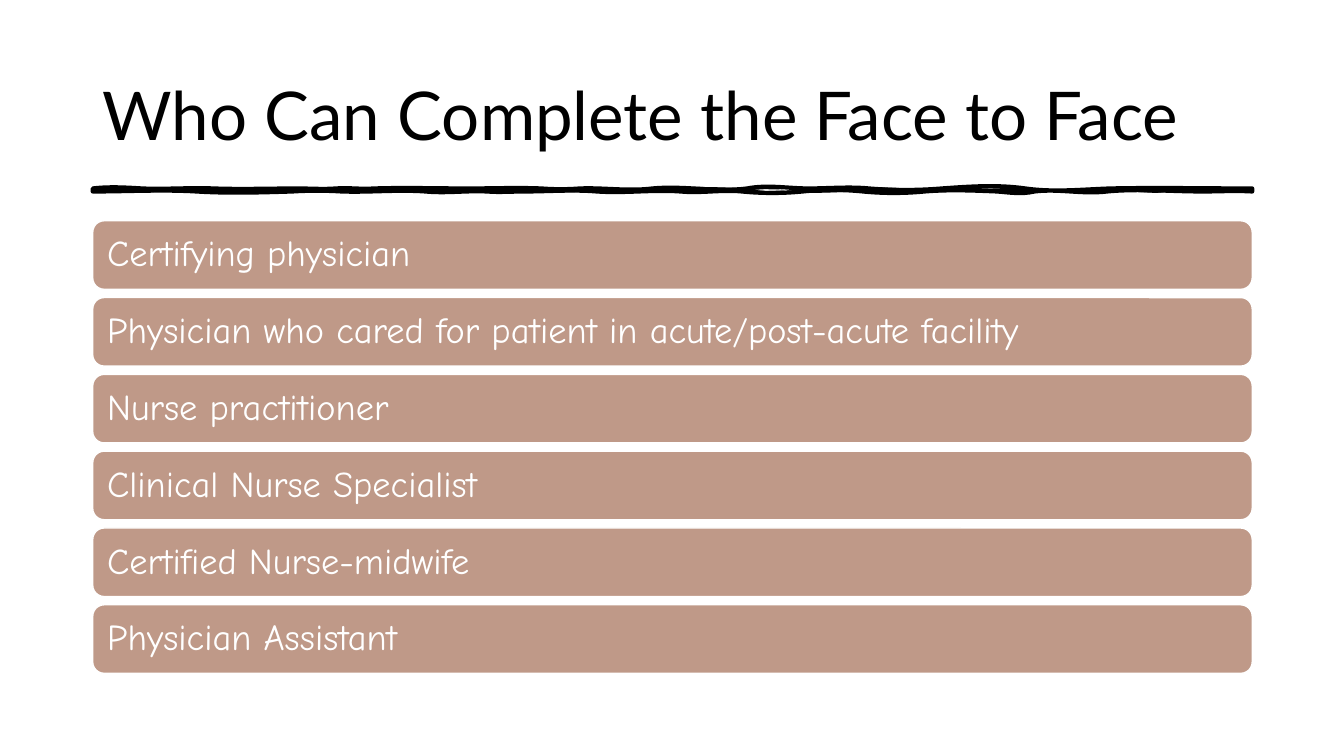
from dataclasses import dataclass

from lxml import etree
from pptx import Presentation
from pptx.dml.color import RGBColor
from pptx.enum.shapes import MSO_SHAPE
from pptx.enum.text import MSO_ANCHOR, PP_ALIGN
from pptx.oxml.ns import qn
from pptx.util import Inches, Pt

ROUNDED = MSO_SHAPE.ROUNDED_RECTANGLE
MIDDLE = MSO_ANCHOR.MIDDLE
LEFT = PP_ALIGN.LEFT


@dataclass(frozen=True)
class Theme:
    ink: RGBColor = RGBColor(0x00, 0x00, 0x00)
    paper: RGBColor = RGBColor(0xFF, 0xFF, 0xFF)
    bar: RGBColor = RGBColor(0xBF, 0x99, 0x88)
    title_font: str = "Lato"
    body_font: str = "Comic Neue"
    title_size: int = 48
    body_size: int = 26
    stroke: int = 3


THEME = Theme()
SLIDE_WIDTH, SLIDE_HEIGHT = 13.33, 7.5
MARGIN, CONTENT_WIDTH = 0.92, 11.5
TITLE_BOX = (MARGIN, 0.4, CONTENT_WIDTH, 1.45)
RULE_BOX = (MARGIN, 1.87, CONTENT_WIDTH, 0.03)
LIST_BOX = (MARGIN, 2.19, CONTENT_WIDTH, 4.49)
BAR_HEIGHT = 0.68
BAR_INSET = 0.11

TITLE = "Who Can Complete the Face to Face"
CLINICIANS = [
    "Certifying physician",
    "Physician who cared for patient in acute/post-acute facility",
    "Nurse practitioner",
    "Clinical Nurse Specialist",
    "Certified Nurse-midwife",
    "Physician Assistant",
]

RULE_UNITS = (1150, 3)
UNIT_SCALE = 10
OUTLINED_STRAND = (
    ([0, 49, 120, 204, 241, 279, 373, 445, 483, 555, 649, 710, 770, 842, 925, 1009, 1150],
     [2, -1, -1, 0, 1, 1, 0, -1, 1, 3, 4, 0, -2, 2, -4, 1, 0]),
    ([1150, 1101, 1006, 934, 897, 825, 764, 704, 644, 583, 500, 428, 391, 330, 247, 198, 103, 0],
     [1, 0, -3, -3, 1, -2, 2, -2, 2, 2, 2, 0, 1, 2, 1, -1, 2, 0]),
)
FILLED_STRAND = (
    ([0, 60, 97, 192, 253, 313, 408, 457, 552, 647, 718, 813, 874, 934, 1017, 1078, 1150],
     [-2, 2, -2, -2, 1, -2, 1, 0, 2, -2, 3, -1, -1, -2, 3, -3, 0]),
    ([1150, 1066, 1029, 980, 885, 813, 764, 693, 655, 618, 546, 497, 414, 365, 281, 244, 161,
      112, 74, 0],
     [-2, -3, 0, 2, 4, 4, 0, 3, -2, 1, -3, -1, 1, 0, 2, -1, 2, 1, -1, 2]),
)


def add_segment(path, tag, points):
    segment = etree.SubElement(path, qn(tag))
    for x, y in points:
        etree.SubElement(segment, qn("a:pt"), x=str(round(x * UNIT_SCALE)),
                         y=str(round(y * UNIT_SCALE)))


def add_edge(path, edge, baseline):
    knots, wobbles = edge
    for index in range(1, len(knots)):
        start, end = knots[index - 1:index + 1]
        third = (end - start) / 3
        add_segment(path, "a:cubicBezTo", [
            (start + third, baseline - wobbles[index - 1]),
            (end - third, baseline + wobbles[index]),
            (end, baseline),
        ])


def add_strand(path_list, strand, **paint):
    width, height = RULE_UNITS
    path = etree.SubElement(path_list, qn("a:path"), w=str(width * UNIT_SCALE),
                            h=str(height * UNIT_SCALE), **paint)
    add_segment(path, "a:moveTo", [(0, 0)])
    upper, lower = strand
    add_edge(path, upper, 0)
    add_segment(path, "a:lnTo", [(width, height)])
    add_edge(path, lower, height)
    etree.SubElement(path, qn("a:close"))


def add_rule(slide, box):
    left, top, width, height = map(Inches, box)
    builder = slide.shapes.build_freeform(left, top)
    builder.add_line_segments(
        [(left + width, top), (left + width, top + height), (left, top + height)])
    rule = builder.convert_to_shape()
    path_list = next(rule.element.iter(qn("a:pathLst")))
    path_list.remove(path_list[0])
    add_strand(path_list, OUTLINED_STRAND, fill="none")
    add_strand(path_list, FILLED_STRAND, stroke="0")
    rule.shadow.inherit = False
    rule.fill.solid()
    rule.fill.fore_color.rgb = THEME.ink
    rule.line.color.rgb = THEME.ink
    rule.line.width = Pt(THEME.stroke)


def set_text(shape, text, font_name, size, color):
    frame = shape.text_frame
    frame.word_wrap = True
    frame.vertical_anchor = MIDDLE
    paragraph = frame.paragraphs[0]
    paragraph.text = text
    paragraph.alignment = LEFT
    paragraph.font.name = font_name
    paragraph.font.size = Pt(size)
    paragraph.font.color.rgb = color
    return frame


def add_title(slide, box):
    shape = slide.shapes.add_textbox(*map(Inches, box))
    set_text(shape, TITLE, THEME.title_font, THEME.title_size, THEME.ink)


def add_clinician_list(slide, box):
    left, top, width, height = box
    pitch = (height - BAR_HEIGHT) / (len(CLINICIANS) - 1)
    for row, clinician in enumerate(CLINICIANS):
        bar = slide.shapes.add_shape(
            ROUNDED, *map(Inches, (left, top + row * pitch, width, BAR_HEIGHT)))
        bar.shadow.inherit = False
        bar.fill.solid()
        bar.fill.fore_color.rgb = THEME.bar
        bar.line.color.rgb = THEME.paper
        bar.line.width = Pt(1)
        frame = set_text(bar, clinician, THEME.body_font, THEME.body_size, THEME.paper)
        frame.margin_left = frame.margin_right = Inches(BAR_INSET)
        frame.paragraphs[0].line_spacing = 0.9


def main():
    presentation = Presentation()
    presentation.slide_width = Inches(SLIDE_WIDTH)
    presentation.slide_height = Inches(SLIDE_HEIGHT)
    slide = presentation.slides.add_slide(presentation.slide_layouts[6])
    add_rule(slide, RULE_BOX)
    add_title(slide, TITLE_BOX)
    add_clinician_list(slide, LIST_BOX)
    presentation.save("out.pptx")


if __name__ == "__main__":
    main()
